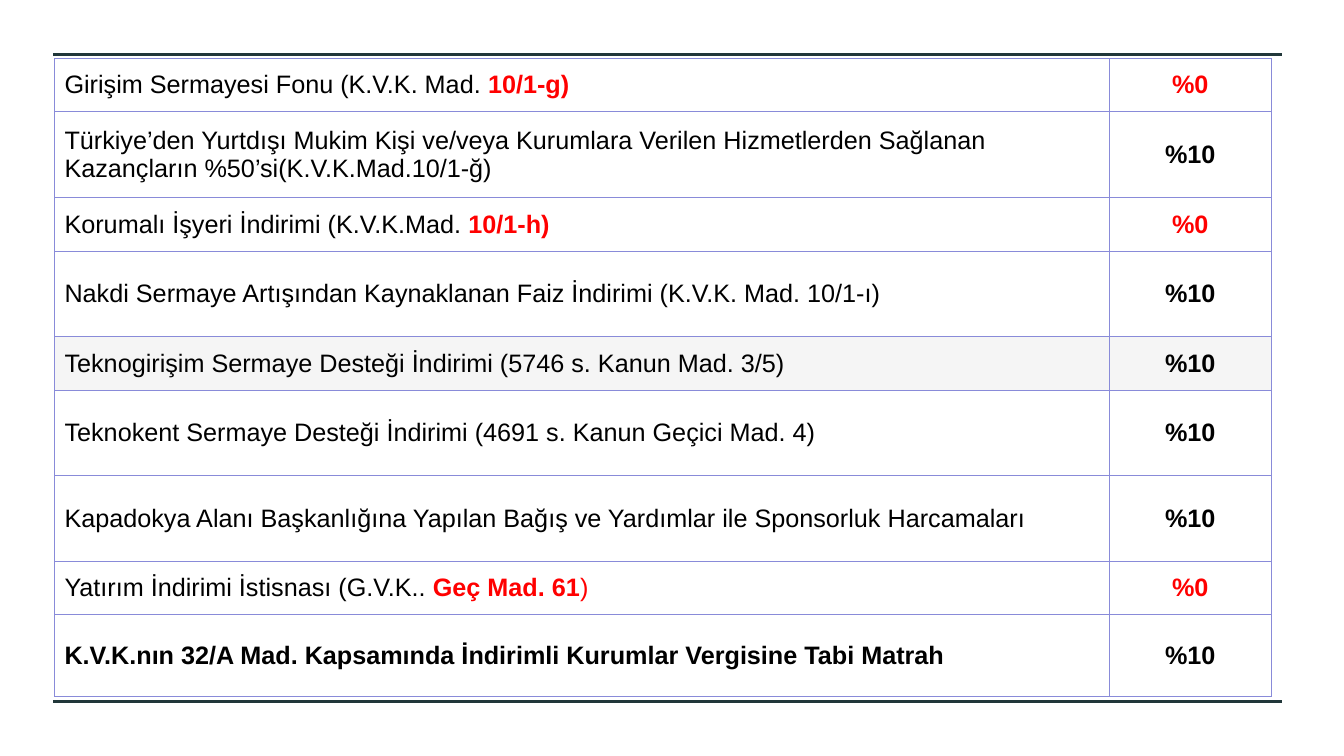
from lxml import etree
from pptx import Presentation
from pptx.dml.color import RGBColor
from pptx.enum.shapes import MSO_CONNECTOR
from pptx.enum.text import MSO_ANCHOR, PP_ALIGN
from pptx.oxml.ns import qn
from pptx.util import Emu, Pt

STRAIGHT = MSO_CONNECTOR.STRAIGHT
MIDDLE = MSO_ANCHOR.MIDDLE
LEFT, CENTER = PP_ALIGN.LEFT, PP_ALIGN.CENTER

PX = 9144  # 100 px to the inch
COLORS = {
    "black": "000000",
    "red": "FF0000",
    "white": "FFFFFF",
    "shade": "F5F5F5",
    "border": "898BD9",
    "rule": "21373A",
}

TABLE_LEFT, TABLE_TOP = 54, 58
COL_WIDTHS = (1046, 161)
LOW, HIGH, TOTAL = 53, 85, 81
RED_BOLD = {"color": "red", "bold": True}

# Each row: height, fill, runs of the label, rate
DEDUCTIONS = [
    (LOW, "white", [("Girişim Sermayesi Fonu (K.V.K. Mad. ", {}),
                    ("10/1-g)", RED_BOLD)], "%0"),
    (HIGH, "white", [("Türkiye’den Yurtdışı Mukim Kişi ve/veya Kurumlara Verilen "
                      "Hizmetlerden Sağlanan Kazançların "
                      "%50’si(K.V.K.Mad.10/1-ğ)", {})], "%10"),
    (LOW, "white", [("Korumalı İşyeri İndirimi (K.V.K.Mad. ", {}),
                    ("10/1-h)", RED_BOLD)], "%0"),
    (HIGH, "white", [("Nakdi Sermaye Artışından Kaynaklanan Faiz İndirimi "
                      "(K.V.K. Mad. 10/1-ı)", {})], "%10"),
    (LOW, "shade", [("Teknogirişim Sermaye Desteği İndirimi "
                     "(5746 s. Kanun Mad. 3/5)", {})], "%10"),
    (HIGH, "white", [("Teknokent Sermaye Desteği İndirimi "
                      "(4691 s. Kanun Geçici Mad. 4)", {})], "%10"),
    (HIGH, "white", [("Kapadokya Alanı Başkanlığına Yapılan Bağış ve Yardımlar "
                      "ile Sponsorluk Harcamaları", {})], "%10"),
    (LOW, "white", [("Yatırım İndirimi İstisnası (G.V.K.. ", {}),
                    ("Geç Mad. 61", RED_BOLD), (")", {"color": "red"})], "%0"),
]
REDUCED_BASE = [
    (TOTAL, "white", [("K.V.K.nın 32/A Mad. Kapsamında İndirimli Kurumlar "
                       "Vergisine Tabi Matrah", {"bold": True})], "%10"),
]


def px(n):
    return Emu(n * PX)


def rgb(name):
    return RGBColor.from_string(COLORS[name])


def add_text(p, text, *, size=18, font="Arial", color="black", bold=False):
    r = p.add_run()
    r.text = text
    r.font.size = Pt(size)
    r.font.name = font
    r.font.bold = bold
    r.font.color.rgb = rgb(color)


def add_rule(s, x1, x2, y):
    line = s.shapes.add_connector(STRAIGHT, px(x1), px(y), px(x2), px(y))
    line.line.color.rgb = rgb("rule")
    line.line.width = Pt(2.25)
    etree.SubElement(line._element.spPr, qn("a:effectLst"))


def set_borders(cell, color="border", width=0.75):
    tc_pr = cell._tc.get_or_add_tcPr()
    for i, side in enumerate(("lnL", "lnR", "lnT", "lnB")):
        ln = etree.Element(qn(f"a:{side}"), w=str(Pt(width)))
        fill = etree.SubElement(ln, qn("a:solidFill"))
        etree.SubElement(fill, qn("a:srgbClr"), val=COLORS[color])
        tc_pr.insert(i, ln)  # borders come before the fill


def fill_cell(cell, runs, fill, align):
    cell.fill.solid()
    cell.fill.fore_color.rgb = rgb(fill)
    set_borders(cell)
    cell.vertical_anchor = MIDDLE
    cell.margin_left = cell.margin_right = px(10)
    cell.margin_top = cell.margin_bottom = px(10)
    p = cell.text_frame.paragraphs[0]
    p.alignment = align
    for text, fmt in runs:
        add_text(p, text, **fmt)


def add_rate_table(s, top, rows):
    """Draw a table of labels and rates; return the y of its bottom edge."""
    height = sum(row[0] for row in rows)
    frame = s.shapes.add_table(len(rows), len(COL_WIDTHS), px(TABLE_LEFT), px(top),
                               px(sum(COL_WIDTHS)), px(height))
    table = frame.table
    table.first_row = table.horz_banding = False
    for col, width in zip(table.columns, COL_WIDTHS):
        col.width = px(width)
    for i, (row_height, fill, label, rate) in enumerate(rows):
        table.rows[i].height = px(row_height)
        rate_color = "red" if rate == "%0" else "black"
        fill_cell(table.cell(i, 0), label, fill, LEFT)
        fill_cell(table.cell(i, 1), [(rate, {"color": rate_color, "bold": True})],
                  fill, CENTER)
    return top + height


def main():
    prs = Presentation()
    prs.slide_width, prs.slide_height = px(1333), px(750)
    s = prs.slides.add_slide(prs.slide_layouts[6])

    # Rules above and below the tables
    for y in (54, 696):
        add_rule(s, 53, 1272, y)

    # Deductions, then the reduced tax base directly below
    bottom = add_rate_table(s, TABLE_TOP, DEDUCTIONS)
    add_rate_table(s, bottom, REDUCED_BASE)

    prs.save("out.pptx")


if __name__ == "__main__":
    main()
